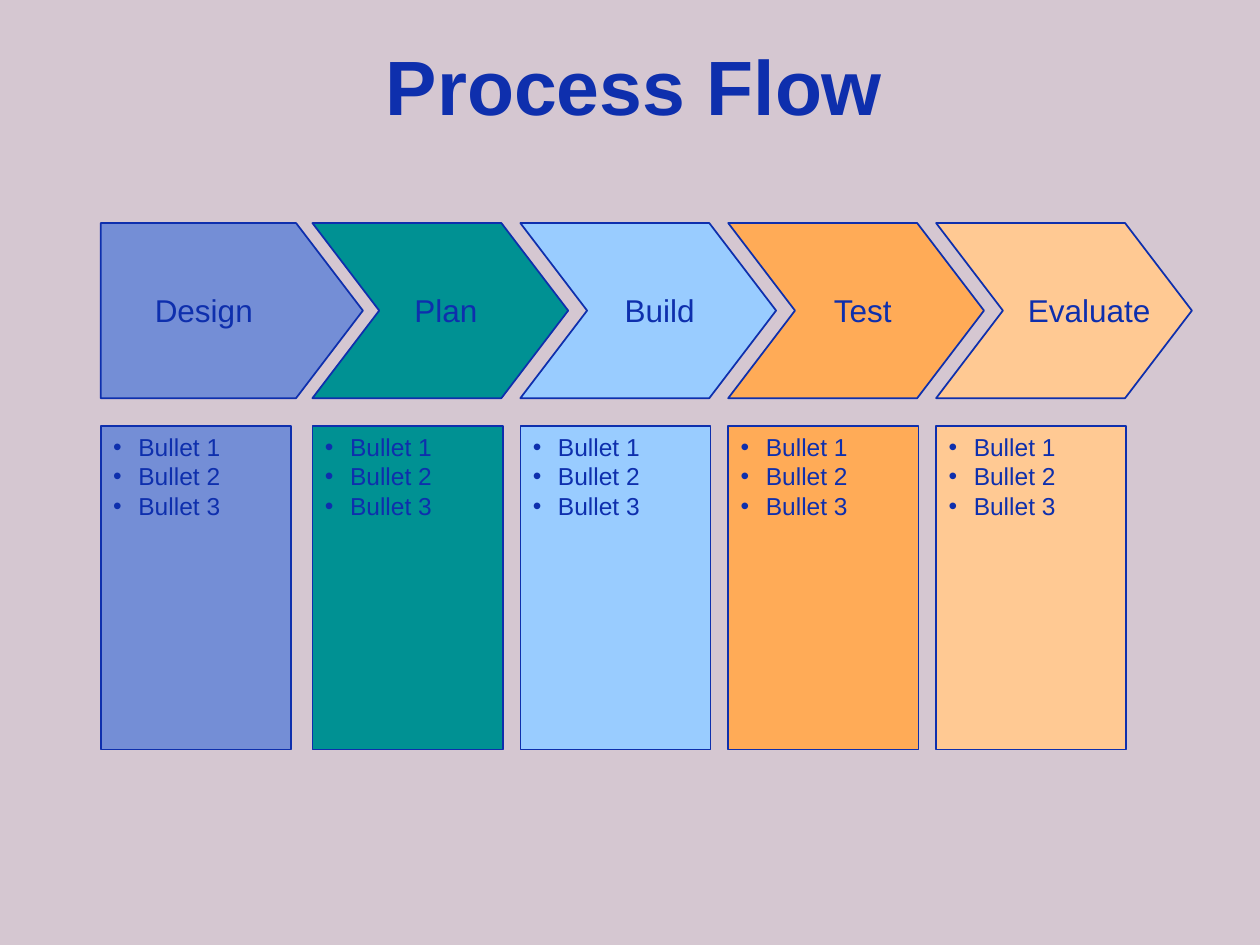
from lxml.etree import SubElement
from pptx import Presentation
from pptx.dml.color import RGBColor
from pptx.enum.shapes import MSO_SHAPE
from pptx.enum.text import MSO_ANCHOR, MSO_AUTO_SIZE, PP_ALIGN
from pptx.oxml.ns import qn
from pptx.util import Inches, Pt

FONT = "Arial"
BACKGROUND = RGBColor(0xD5, 0xC7, 0xD1)
NAVY = RGBColor(0x0E, 0x2F, 0xAD)
PERIWINKLE = RGBColor(0x74, 0x8E, 0xD6)
TEAL = RGBColor(0x00, 0x91, 0x93)
SKY = RGBColor(0x99, 0xCC, 0xFF)
ORANGE = RGBColor(0xFF, 0xAB, 0x57)
PEACH = RGBColor(0xFF, 0xC9, 0x93)

BULLETS = ["Bullet 1", "Bullet 2", "Bullet 3"]
STAGES = [
    ("Design", PERIWINKLE, 0.33, 0.98),
    ("Plan", TEAL, 0.71, 0.7),
    ("Build", SKY, 0.73, 0.76),
    ("Test", ORANGE, 0.74, 0.69),
    ("Evaluate", PEACH, 0.63, 1.17),
]
FIRST_LEFT, SECOND_LEFT, PITCH = 0.8, 2.48, 1.65
ARROW_TOP, ARROW_HEIGHT, ARROW_POINT = 1.77, 1.39, 0.53
BOX_TOP, BOX_WIDTH, BOX_HEIGHT = 3.38, 1.51, 2.57


def add_run(p, text, size, bold=False):
    """Add a navy run of text to a paragraph."""
    r = p.add_run()
    r.text = text
    r.font.name = FONT
    r.font.size = Pt(size)
    r.font.bold = bold
    r.font.color.rgb = NAVY


def add_filled_shape(slide, kind, box, color):
    """Add a preset shape with a solid fill and a thin navy outline."""
    sp = slide.shapes.add_shape(kind, *map(Inches, box))
    sp.shadow.inherit = False
    sp.fill.solid()
    sp.fill.fore_color.rgb = color
    sp.line.color.rgb = NAVY
    sp.line.width = Pt(1)
    return sp


def set_title(slide, text, box):
    """Place and format the title placeholder."""
    title = slide.shapes.title
    title.left, title.top, title.width, title.height = map(Inches, box)
    tf = title.text_frame
    tf.vertical_anchor = MSO_ANCHOR.MIDDLE
    p = tf.paragraphs[0]
    p.alignment = PP_ALIGN.CENTER
    add_run(p, text, 44, bold=True)


def add_bullet_box(slide, box, color, bullets):
    """Add a filled box holding a bulleted list."""
    sp = add_filled_shape(slide, MSO_SHAPE.RECTANGLE, box, color)
    tf = sp.text_frame
    tf.vertical_anchor = MSO_ANCHOR.TOP
    for i, text in enumerate(bullets):
        p = tf.add_paragraph() if i else tf.paragraphs[0]
        p.alignment = PP_ALIGN.LEFT
        pPr = p._p.get_or_add_pPr()
        pPr.set("marL", str(Inches(0.2)))
        pPr.set("indent", str(Inches(-0.2)))
        SubElement(pPr, qn("a:buFont"), typeface=FONT)
        SubElement(pPr, qn("a:buChar"), char="•")
        add_run(p, text, 14)


def add_stage_arrow(slide, kind, box, color):
    """Add a stage arrow whose point has a fixed depth."""
    sp = add_filled_shape(slide, kind, box, color)
    sp.adjustments[0] = ARROW_POINT / box[3]


def add_label(slide, text, box):
    """Add a one-line stage label."""
    tf = slide.shapes.add_textbox(*map(Inches, box)).text_frame
    tf.word_wrap = False
    tf.auto_size = MSO_AUTO_SIZE.SHAPE_TO_FIT_TEXT
    add_run(tf.paragraphs[0], text, 18)


def add_stage(slide, index, name, color, label_offset, label_width):
    """Add one stage: its bullet box, arrow and label."""
    if index:
        left = SECOND_LEFT + PITCH * (index - 1)
        kind, width = MSO_SHAPE.CHEVRON, 2.03
    else:
        left = FIRST_LEFT
        kind, width = MSO_SHAPE.PENTAGON, 2.08
    add_bullet_box(slide, (left, BOX_TOP, BOX_WIDTH, BOX_HEIGHT), color, BULLETS)
    add_stage_arrow(slide, kind, (left, ARROW_TOP, width, ARROW_HEIGHT), color)
    add_label(slide, name, (left + label_offset, 2.26, label_width, 0.4))


def main():
    """Build the process flow slide and save it."""
    prs = Presentation()
    prs.slide_width, prs.slide_height = Inches(10), Inches(7.5)
    slide = prs.slides.add_slide(prs.slide_layouts[5])
    slide.background.fill.solid()
    slide.background.fill.fore_color.rgb = BACKGROUND
    set_title(slide, "Process Flow", (0.5, 0.28, 9.07, 0.79))
    for index, stage in enumerate(STAGES):
        add_stage(slide, index, *stage)
    prs.save("out.pptx")


if __name__ == "__main__":
    main()
